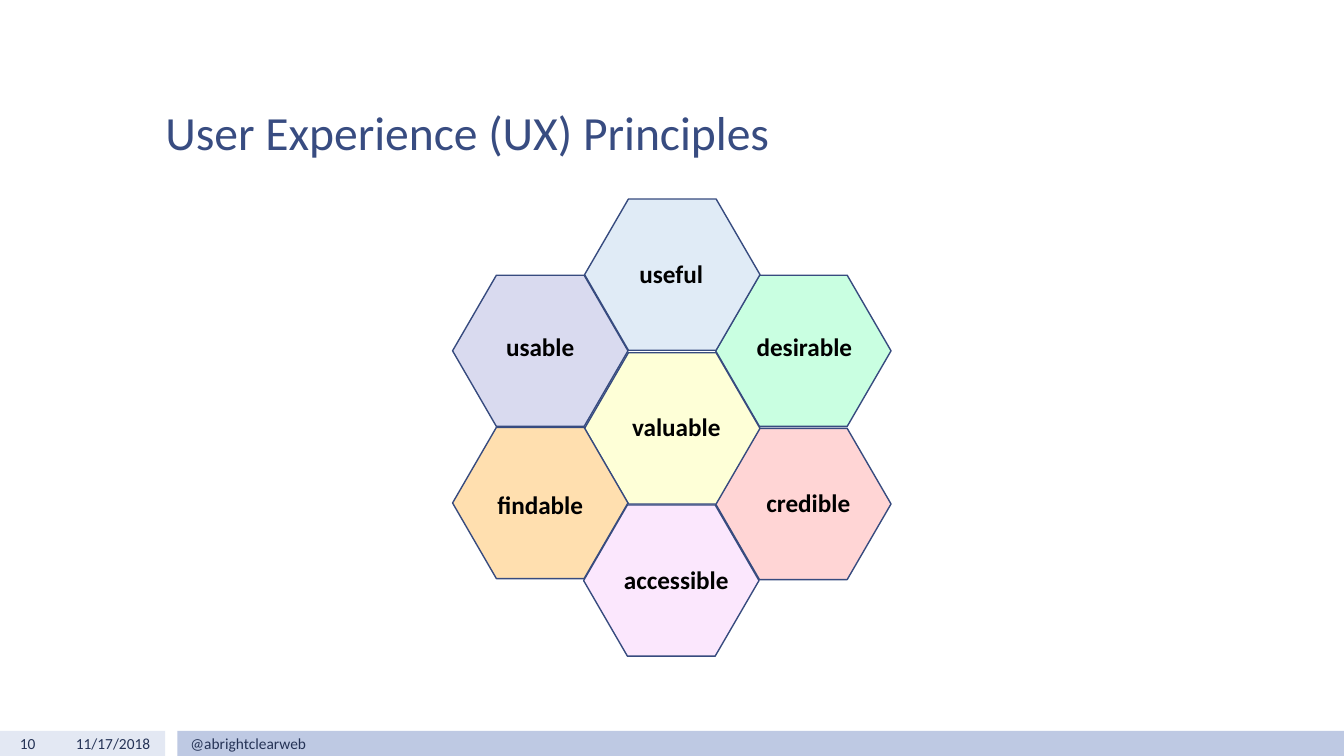
from pptx import Presentation
from pptx.dml.color import RGBColor
from pptx.enum.shapes import MSO_SHAPE
from pptx.enum.text import MSO_ANCHOR, MSO_AUTO_SIZE, PP_ALIGN
from pptx.util import Pt

FONT = "Calibri"
TITLE_BLUE = RGBColor(0x38, 0x4C, 0x81)
FOOTER_BLUE = RGBColor(0x25, 0x33, 0x56)
OUTLINE_BLUE = RGBColor(0x37, 0x4B, 0x7F)
PALE_BAR = RGBColor(0xE3, 0xE8, 0xF3)
BLUE_BAR = RGBColor(0xBE, 0xC9, 0xE3)
BLACK = RGBColor(0, 0, 0)
GREEN = RGBColor(0xC9, 0xFF, 0xE1)
LAVENDER = RGBColor(0xD9, 0xDA, 0xEF)
RED = RGBColor(0xFF, 0xD5, 0xD5)
SKY = RGBColor(0xE0, 0xEB, 0xF6)
YELLOW = RGBColor(0xFE, 0xFF, 0xD7)
ORANGE = RGBColor(0xFF, 0xDF, 0xAF)
PINK = RGBColor(0xFB, 0xE7, 0xFD)

deck = Presentation()
deck.slide_width, deck.slide_height = Pt(960), Pt(540)
page = deck.slides.add_slide(deck.slide_layouts[5])


def add_filled(preset, left, top, width, height, color):
    shape = page.shapes.add_shape(preset, Pt(left), Pt(top), Pt(width), Pt(height))
    shape.shadow.inherit = False
    shape.fill.solid()
    shape.fill.fore_color.rgb = color
    shape.line.fill.background()
    return shape


def add_text(text, left, top, width, height, size, color, align):
    box = page.shapes.add_textbox(Pt(left), Pt(top), Pt(width), Pt(height))
    frame = box.text_frame
    frame.word_wrap = True
    frame.text = text
    paragraph = frame.paragraphs[0]
    paragraph.alignment = align
    font = paragraph.runs[0].font
    font.name, font.size, font.color.rgb = FONT, Pt(size), color
    return box


# Title
title = page.shapes.title
title.left, title.top, title.width, title.height = Pt(110.9), Pt(21.6), Pt(738), Pt(92.9)
title_frame = title.text_frame
title_frame.text = "User Experience (UX) Principles"
title_frame.auto_size = MSO_AUTO_SIZE.NONE
title_frame.vertical_anchor = MSO_ANCHOR.BOTTOM
title_frame.margin_bottom = 0
title_frame.paragraphs[0].alignment = PP_ALIGN.LEFT
title_font = title_frame.paragraphs[0].runs[0].font
title_font.name, title_font.size, title_font.color.rgb = FONT, Pt(34), TITLE_BLUE

# Footer
FOOTER_TOP, FOOTER_HEIGHT = 522, 18
for left, width, color in [(0, 118.1, PALE_BAR), (126.7, 833.3, BLUE_BAR)]:
    add_filled(MSO_SHAPE.RECTANGLE, left, FOOTER_TOP, width, FOOTER_HEIGHT, color)
for text, left, width, align in [
    ("10", 0, 32.4, PP_ALIGN.RIGHT),
    ("11/17/2018", 36, 78.5, PP_ALIGN.RIGHT),
    ("@abrightclearweb", 128.9, 831.1, PP_ALIGN.LEFT),
]:
    footer = add_text(text, left, FOOTER_TOP, width, FOOTER_HEIGHT, 11, FOOTER_BLUE, align)
    footer.text_frame.vertical_anchor = MSO_ANCHOR.MIDDLE

# Honeycomb: name, fill, hexagon left and top, label left and top
HEXAGON_WIDTH, HEXAGON_HEIGHT = 125.3, 108
LABEL_WIDTH, LABEL_HEIGHT = 100.8, 28.8
principles = [
    ("desirable", GREEN, 511.2, 196.6, 524.2, 233.3),
    ("usable", LAVENDER, 323.3, 196.6, 335.5, 233.3),
    ("credible", RED, 511.2, 306, 527, 344.9),
    ("useful", SKY, 417.6, 142.2, 429.1, 180.7),
    ("valuable", YELLOW, 417.6, 252, 432.7, 290.2),
    ("findable", ORANGE, 323.3, 305.3, 335.5, 346.3),
    ("accessible", PINK, 416.9, 360.7, 432.7, 399.6),
]
for name, color, left, top, label_left, label_top in principles:
    hexagon = add_filled(MSO_SHAPE.HEXAGON, left, top, HEXAGON_WIDTH, HEXAGON_HEIGHT, color)
    hexagon.adjustments[0] = 0.29
    hexagon.adjustments[1] = 1.155
    hexagon.line.color.rgb = OUTLINE_BLUE
    hexagon.line.width = Pt(1)
for name, color, left, top, label_left, label_top in principles:
    label = add_text(name, label_left, label_top, LABEL_WIDTH, LABEL_HEIGHT, 18, BLACK, PP_ALIGN.CENTER)
    label.text_frame.paragraphs[0].runs[0].font.bold = True

deck.save("out.pptx")
